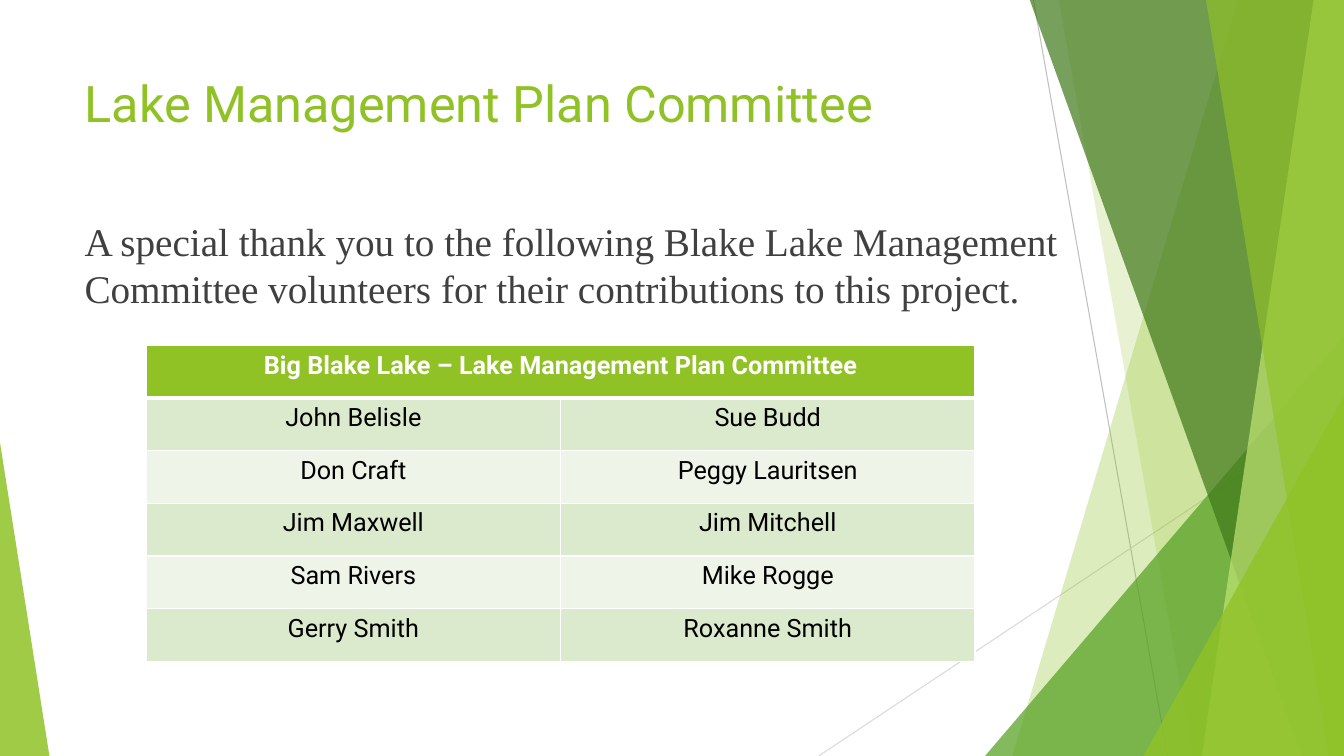
from lxml import etree
from pptx import Presentation
from pptx.dml.color import RGBColor
from pptx.enum.shapes import MSO_CONNECTOR, MSO_SHAPE
from pptx.enum.text import MSO_ANCHOR, PP_ALIGN
from pptx.oxml.ns import qn
from pptx.util import Inches, Pt

STRAIGHT = MSO_CONNECTOR.STRAIGHT
TRIANGLE = MSO_SHAPE.ISOSCELES_TRIANGLE
TOP = MSO_ANCHOR.TOP
CENTER = PP_ALIGN.CENTER

WIDTH, HEIGHT = 13.33, 7.5
GREEN, WHITE = "90C226", "FFFFFF"
BANDS = ("DBE9CD", "EEF4E8")

LINES = [
    ((10.25, 0), (11.58, HEIGHT), "BFBFBF"),
    ((WIDTH, 4.03), (8.12, HEIGHT), "D9D9D9"),
]
BACK_PANELS = [(12.28, 10.04, GREEN, 30), (10.5, 11.83, GREEN, 20)]
FRONT_PANELS = [
    (10.21, 12.91, "3F7819", 70),
    (13.03, 11.92, "C0E474", 70),
    (11.96, 13.18, GREEN, 65),
]
BACK_TRIANGLE = (9.77, 3.33, 3.56, 1, "54A021", 72)
FRONT_TRIANGLES = [(11.34, 3.93, 1.99, 1, GREEN, 80), (0, 4.39, 0.49, 0, GREEN, 85)]

TITLE = "Lake Management Plan Committee"
THANKS = (
    "A special thank you to the following Blake Lake Management "
    "Committee volunteers for their contributions to this project."
)
HEADING = "Big Blake Lake – Lake Management Plan Committee"
MEMBERS = [
    ("John Belisle", "Sue Budd"),
    ("Don Craft", "Peggy Lauritsen"),
    ("Jim Maxwell", "Jim Mitchell"),
    ("Sam Rivers", "Mike Rogge"),
    ("Gerry Smith", "Roxanne Smith"),
]


def colour(value):
    """Turn a hex string into a colour."""
    return RGBColor.from_string(value)


def paint(shape, fill, opacity):
    """Give a shape a see-through fill without line or shadow."""
    shape.shadow.inherit = False
    shape.line.fill.background()
    shape.fill.solid()
    shape.fill.fore_color.rgb = colour(fill)
    tint = shape.fill._xPr.find(qn("a:solidFill"))[0]
    etree.SubElement(tint, qn("a:alpha"), val=str(opacity * 1000))


def add_line(page, start, end, stroke):
    """Draw a thin straight line."""
    points = [Inches(value) for value in start + end]
    line = page.shapes.add_connector(STRAIGHT, *points)
    line.line.color.rgb = colour(stroke)
    line.line.width = Pt(0.75)
    etree.SubElement(line._element.spPr, qn("a:effectLst"))


def add_panel(page, top_left, bottom_left, fill, opacity):
    """Draw a full-height panel with a slanted left edge."""
    builder = page.shapes.build_freeform(Inches(top_left), Inches(-0.01))
    corners = [(WIDTH, -0.01), (WIDTH, HEIGHT), (bottom_left, HEIGHT)]
    builder.add_line_segments([(Inches(x), Inches(y)) for x, y in corners])
    paint(builder.convert_to_shape(), fill, opacity)


def add_triangle(page, left, top, width, apex, fill, opacity):
    """Draw a triangle that stands on the bottom edge."""
    box = [Inches(value) for value in (left, top, width, HEIGHT - top)]
    triangle = page.shapes.add_shape(TRIANGLE, *box)
    triangle.adjustments[0] = apex
    paint(triangle, fill, opacity)


def write(para, text, ink, **values):
    """Add a formatted span to a paragraph."""
    span = para.add_run()
    span.text = text
    span.font.color.rgb = colour(ink)
    for name, value in values.items():
        setattr(span.font, name, value)


def add_text(page, place, text, ink, space=0, **values):
    """Add a wrapped text box with one paragraph."""
    box = page.shapes.add_textbox(*[Inches(value) for value in place])
    box.text_frame.word_wrap = True
    box.text_frame.vertical_anchor = TOP
    para = box.text_frame.paragraphs[0]
    para.space_before = Pt(space)
    write(para, text, ink, **values)


def add_borders(cell, bottom):
    """Draw white borders round a cell."""
    properties = cell._tc.get_or_add_tcPr()
    widths = {"lnL": 1, "lnR": 1, "lnT": 1, "lnB": bottom}
    for position, (side, width) in enumerate(widths.items()):
        border = etree.Element(qn(f"a:{side}"), w=str(Pt(width)))
        fill = etree.SubElement(border, qn("a:solidFill"))
        etree.SubElement(fill, qn("a:srgbClr"), val=WHITE)
        properties.insert(position, border)


def fill_cell(cell, text, fill, ink, bold, bottom=1):
    """Set the fill, borders and text of a cell."""
    cell.fill.solid()
    cell.fill.fore_color.rgb = colour(fill)
    add_borders(cell, bottom)
    para = cell.text_frame.paragraphs[0]
    para.alignment = CENTER
    if text:
        write(para, text, ink, size=Pt(18), name="Roboto", bold=bold)


def add_members(page):
    """Add the table of committee members."""
    place = [Inches(value) for value in (1.45, 3.43, 8.22, 3.13)]
    table = page.shapes.add_table(len(MEMBERS) + 1, 2, *place).table
    table.cell(0, 0).merge(table.cell(0, 1))
    for column, text in enumerate((HEADING, "")):
        fill_cell(table.cell(0, column), text, GREEN, WHITE, True, bottom=3)
    for row, names in enumerate(MEMBERS):
        for column, name in enumerate(names):
            cell = table.cell(row + 1, column)
            fill_cell(cell, name, BANDS[row % 2], "000000", False)


def main():
    """Build the slide and save it."""
    deck = Presentation()
    deck.slide_width, deck.slide_height = Inches(WIDTH), Inches(HEIGHT)
    page = deck.slides.add_slide(deck.slide_layouts[6])
    for line in LINES:
        add_line(page, *line)
    for panel in BACK_PANELS:
        add_panel(page, *panel)
    add_triangle(page, *BACK_TRIANGLE)
    for panel in FRONT_PANELS:
        add_panel(page, *panel)
    for triangle in FRONT_TRIANGLES:
        add_triangle(page, *triangle)
    add_text(page, (0.74, 0.67, 9.4, 1.44), TITLE, GREEN, size=Pt(36), name="Roboto")
    add_text(page, (0.74, 2.11, 9.94, 4.24), THANKS, "404040", space=10,
             size=Pt(28), name="Times New Roman")
    add_members(page)
    deck.save("out.pptx")


if __name__ == "__main__":
    main()
